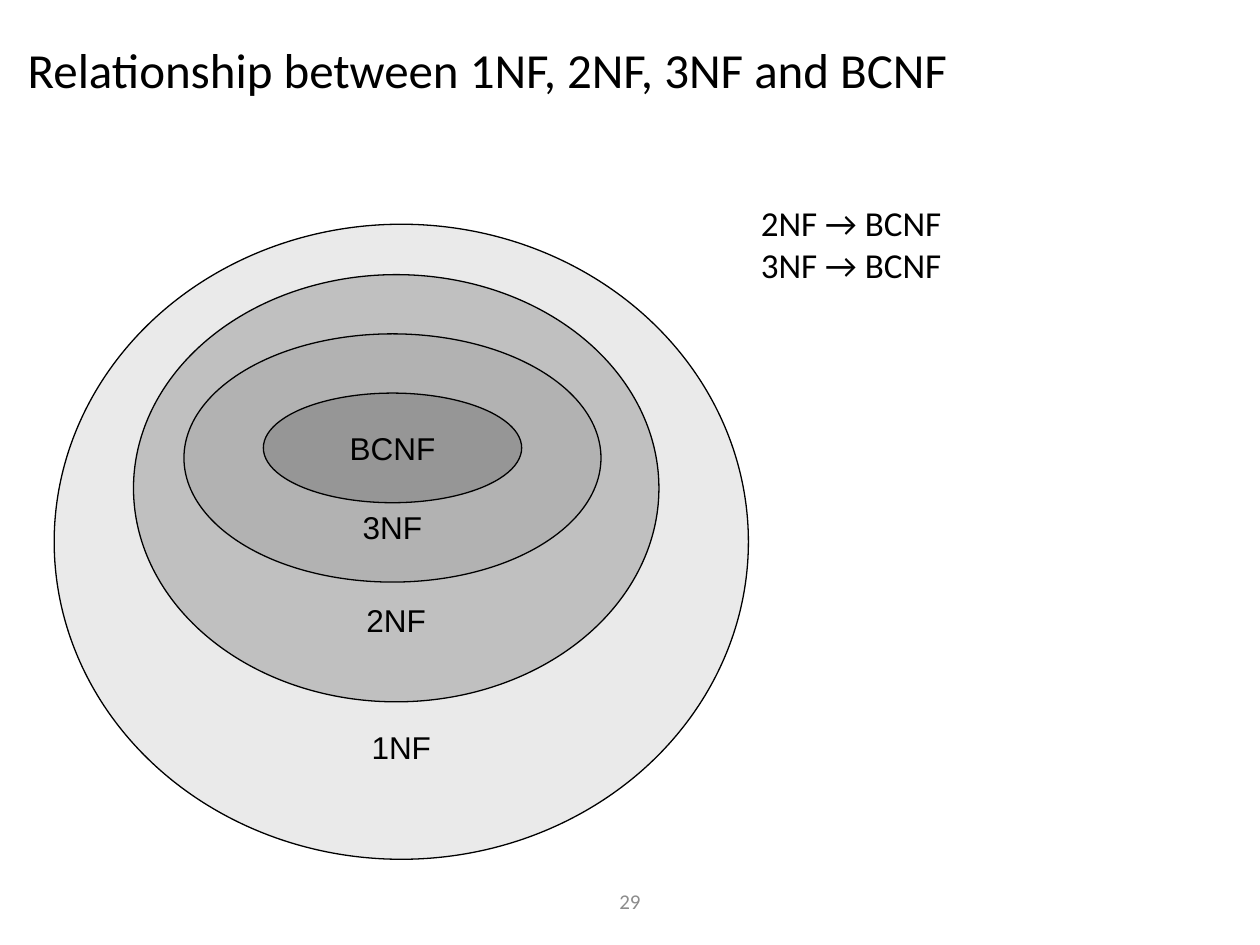
from dataclasses import dataclass

from pptx import Presentation
from pptx.dml.color import RGBColor
from pptx.enum.shapes import MSO_SHAPE
from pptx.enum.text import MSO_ANCHOR, MSO_AUTO_SIZE, PP_ALIGN
from pptx.util import Inches, Pt

OVAL = MSO_SHAPE.OVAL
TOP, MIDDLE, BOTTOM = MSO_ANCHOR.TOP, MSO_ANCHOR.MIDDLE, MSO_ANCHOR.BOTTOM
LEFT, CENTER = PP_ALIGN.LEFT, PP_ALIGN.CENTER
NO_FIT = MSO_AUTO_SIZE.NONE
TITLE_ONLY = 5


@dataclass(frozen=True)
class Theme:
    """Colours, fonts and type sizes of the slide."""
    ink: str = "000000"
    muted: str = "8C8C8C"
    text_font: str = "Calibri"
    diagram_font: str = "Arial"
    title_size: int = 28
    note_size: int = 20
    label_size: int = 18
    number_size: int = 12
    outline: float = 0.75


THEME = Theme()

NORMAL_FORMS = [
    ("1NF", "EAEAEA", (0.43, 1.78, 5.51, 5.04), BOTTOM, 0),
    ("2NF", "C0C0C0", (1.06, 2.18, 4.17, 3.39), BOTTOM, 0),
    ("3NF", "B2B2B2", (1.46, 2.65, 3.31, 1.97), BOTTOM, 0),
    ("BCNF", "969696", (2.09, 3.12, 2.05, 0.87), MIDDLE, 0.05),
]


def to_lengths(box):
    """Turn a box in inches into slide lengths."""
    return [Inches(value) for value in box]


def write_text(shape, lines, size, font=THEME.text_font, color=THEME.ink,
               align=LEFT, spacing=None, **frame_format):
    """Fill a shape with one formatted paragraph per line."""
    frame = shape.text_frame
    settings = {"auto_size": NO_FIT, "word_wrap": True, **frame_format}
    for name, value in settings.items():
        setattr(frame, name, value)
    frame.text = "\n".join(lines)
    for para in frame.paragraphs:
        para.alignment = align
        para.line_spacing = spacing
        for span in para.runs:
            for name, value in {"size": Pt(size), "name": font}.items():
                setattr(span.font, name, value)
            span.font.color.rgb = RGBColor.from_string(color)


def add_title(page, box, text):
    """Place the title placeholder and set its text."""
    title = page.shapes.title
    for name, value in zip(("left", "top", "width", "height"), to_lengths(box)):
        setattr(title, name, value)
    write_text(title, [text], THEME.title_size, spacing=0.9,
               vertical_anchor=MIDDLE)


def add_normal_form(page, box, label, fill, anchor, bottom_inset):
    """Draw one set of the nested diagram with its label."""
    oval = page.shapes.add_shape(OVAL, *to_lengths(box))
    oval.shadow.inherit = False
    oval.fill.solid()
    oval.fill.fore_color.rgb = RGBColor.from_string(fill)
    oval.line.color.rgb = RGBColor.from_string(THEME.ink)
    oval.line.width = Pt(THEME.outline)
    write_text(oval, [label], THEME.label_size, font=THEME.diagram_font,
               align=CENTER, word_wrap=False, vertical_anchor=anchor,
               margin_bottom=Inches(bottom_inset))


def add_text(page, box, lines, size, **text_format):
    """Add a text box with the given lines."""
    write_text(page.shapes.add_textbox(*to_lengths(box)), lines, size,
               **text_format)


def main():
    """Build the slide and save the deck."""
    deck = Presentation()
    deck.slide_width, deck.slide_height = Inches(10), Inches(7.5)
    page = deck.slides.add_slide(deck.slide_layouts[TITLE_ONLY])
    add_title(page, (0.12, 0.08, 9.76, 0.99),
              "Relationship between 1NF, 2NF, 3NF and BCNF")
    for label, fill, box, anchor, bottom_inset in NORMAL_FORMS:
        add_normal_form(page, box, label, fill, anchor, bottom_inset)
    add_text(page, (5.94, 1.55, 3.15, 0.77), ["2NF → BCNF", "3NF → BCNF"],
             THEME.note_size, vertical_anchor=TOP)
    add_text(page, (3.31, 6.95, 3.38, 0.4), ["29"], THEME.number_size,
             color=THEME.muted, align=CENTER, vertical_anchor=MIDDLE)
    deck.save("out.pptx")


if __name__ == "__main__":
    main()
